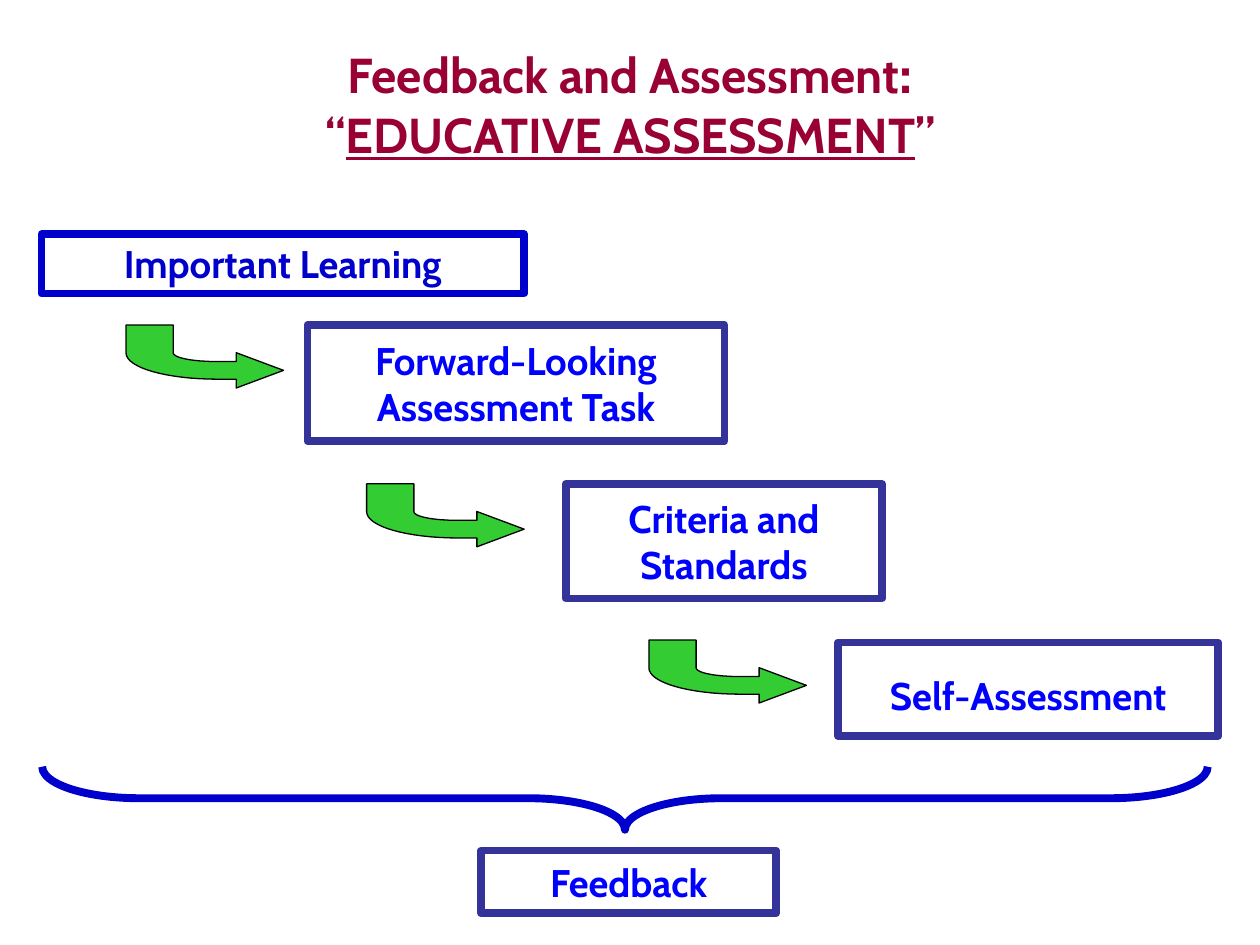
from pptx import Presentation
from pptx.dml.color import RGBColor
from pptx.enum.shapes import MSO_SHAPE
from pptx.enum.text import MSO_ANCHOR, PP_ALIGN
from pptx.util import Inches, Pt

COLORS = {"title": "990033", "text": "0000FF", "border": "333399",
          "strong": "0000CC", "arrow": "33CC33", "outline": "000000"}
FONT = "Cabin"
WIDTH, HEIGHT = Inches(10), Inches(7.5)
COLUMN, ROW = WIDTH / 100, HEIGHT / 75  # grid of 100 columns by 75 rows
ARROW_SIZE = (12.5, 5)
INSET = (1, 0.5)


def place(left, top, width, height):
    return (round(left * COLUMN), round(top * ROW),
            round(width * COLUMN), round(height * ROW))


def rgb(name):
    return RGBColor.from_string(COLORS[name])


def apply(target, values):
    for name, value in values.items():
        setattr(target, name, value)


def set_line(shape, color, points):
    shape.shadow.inherit = False
    shape.line.color.rgb = rgb(color)
    shape.line.width = Pt(points)


def set_frame(frame, anchor, inset=INSET):
    side, end = round(inset[0] * COLUMN), round(inset[1] * ROW)
    apply(frame, {"word_wrap": True, "vertical_anchor": anchor,
                  "margin_left": side, "margin_right": side,
                  "margin_top": end, "margin_bottom": end})


def add_span(para, text, color, size, underline=None):
    span = para.add_run()
    span.text = text
    apply(span.font, {"name": FONT, "size": Pt(size), "bold": True,
                      "underline": underline})
    span.font.color.rgb = rgb(color)


def add_title(page, box):
    frame = page.shapes.add_textbox(*place(*box)).text_frame
    set_frame(frame, MSO_ANCHOR.MIDDLE)
    para = frame.paragraphs[0]
    para.alignment = PP_ALIGN.CENTER
    add_span(para, "Feedback and Assessment", "title", 28)
    add_span(para, ":", "title", 32)
    para.add_line_break()
    add_span(para, "“", "title", 28)
    add_span(para, "EDUCATIVE ASSESSMENT", "title", 28, True)
    add_span(para, "”", "title", 28)


def add_step(page, box, text, border="border", color="text",
             anchor=MSO_ANCHOR.MIDDLE, inset=(0, 0), spacing=None):
    shape = page.shapes.add_shape(MSO_SHAPE.RECTANGLE, *place(*box))
    shape.fill.background()
    set_line(shape, border, 4.5)
    set_frame(shape.text_frame, anchor, inset)
    para = shape.text_frame.paragraphs[0]
    apply(para, {"alignment": PP_ALIGN.CENTER, **(spacing or {})})
    add_span(para, text, color, 22)


def curve(start, first, second, end, steps=16):
    """Points of a cubic curve, without its start."""
    points = []
    for step in range(1, steps + 1):
        t = step / steps
        weights = ((1 - t) ** 3, 3 * t * (1 - t) ** 2, 3 * t * t * (1 - t), t ** 3)
        points.append(tuple(
            sum(weight * value for weight, value in zip(weights, axis))
            for axis in zip(start, first, second, end)))
    return points


def add_arrow(page, box):
    left, top, width, height = place(*box)
    # Outline as shares of the box: head, outer bend, tail, inner bend
    outline = [(1, 0.72), (0.7, 1), (0.7, 0.86), (0.58, 0.86),
               *curve((0.58, 0.86), (0.26, 0.86), (0, 0.68), (0, 0.44)),
               (0, 0), (0.3, 0), (0.3, 0.44),
               *curve((0.3, 0.44), (0.3, 0.52), (0.42, 0.58), (0.58, 0.58)),
               (0.7, 0.58), (0.7, 0.44)]
    points = [(round(left + x * width), round(top + y * height)) for x, y in outline]
    builder = page.shapes.build_freeform(*points[0])
    builder.add_line_segments(points[1:], close=True)
    shape = builder.convert_to_shape()
    shape.fill.solid()
    shape.fill.fore_color.rgb = rgb("arrow")
    set_line(shape, "outline", 0.75)


def add_brace(page, box):
    """Downward brace that spans the box: a left brace turned on its centre."""
    left, top, width, height = box
    turned = (left + (width - height) / 2, top + (height - width) / 2, height, width)
    shape = page.shapes.add_shape(MSO_SHAPE.LEFT_BRACE, *place(*turned))
    shape.rotation = 270
    shape.adjustments[0] = 1.54
    shape.adjustments[1] = 0.5
    shape.fill.background()
    set_line(shape, "strong", 4.5)


def main():
    deck = Presentation()
    apply(deck, {"slide_width": WIDTH, "slide_height": HEIGHT})
    page = deck.slides.add_slide(deck.slide_layouts[6])

    add_title(page, (5, 1.7, 90, 12.5))

    # Staircase of steps
    add_step(page, (3.3, 18.6, 38.3, 4.7), "Important Learning", "strong", "strong",
             MSO_ANCHOR.TOP, INSET)
    add_step(page, (24.4, 25.8, 33.1, 9.2), "Forward-Looking Assessment Task")
    add_step(page, (44.9, 38.4, 25.1, 9.1), "Criteria and Standards")
    add_step(page, (66.5, 51, 30.2, 7.4), "Self-Assessment",
             anchor=MSO_ANCHOR.TOP, inset=INSET,
             spacing={"line_spacing": 1.5, "space_before": Pt(6)})

    # Arrows between the steps
    for corner in ((10, 25.8), (29.1, 38.4), (51.5, 50.8)):
        add_arrow(page, corner + ARROW_SIZE)

    # Feedback on all steps
    add_brace(page, (3.35, 60.85, 92.5, 5))
    add_step(page, (38.2, 67.5, 23.4, 5), "Feedback",
             spacing={"space_before": Pt(24)})

    deck.save("out.pptx")


if __name__ == "__main__":
    main()
